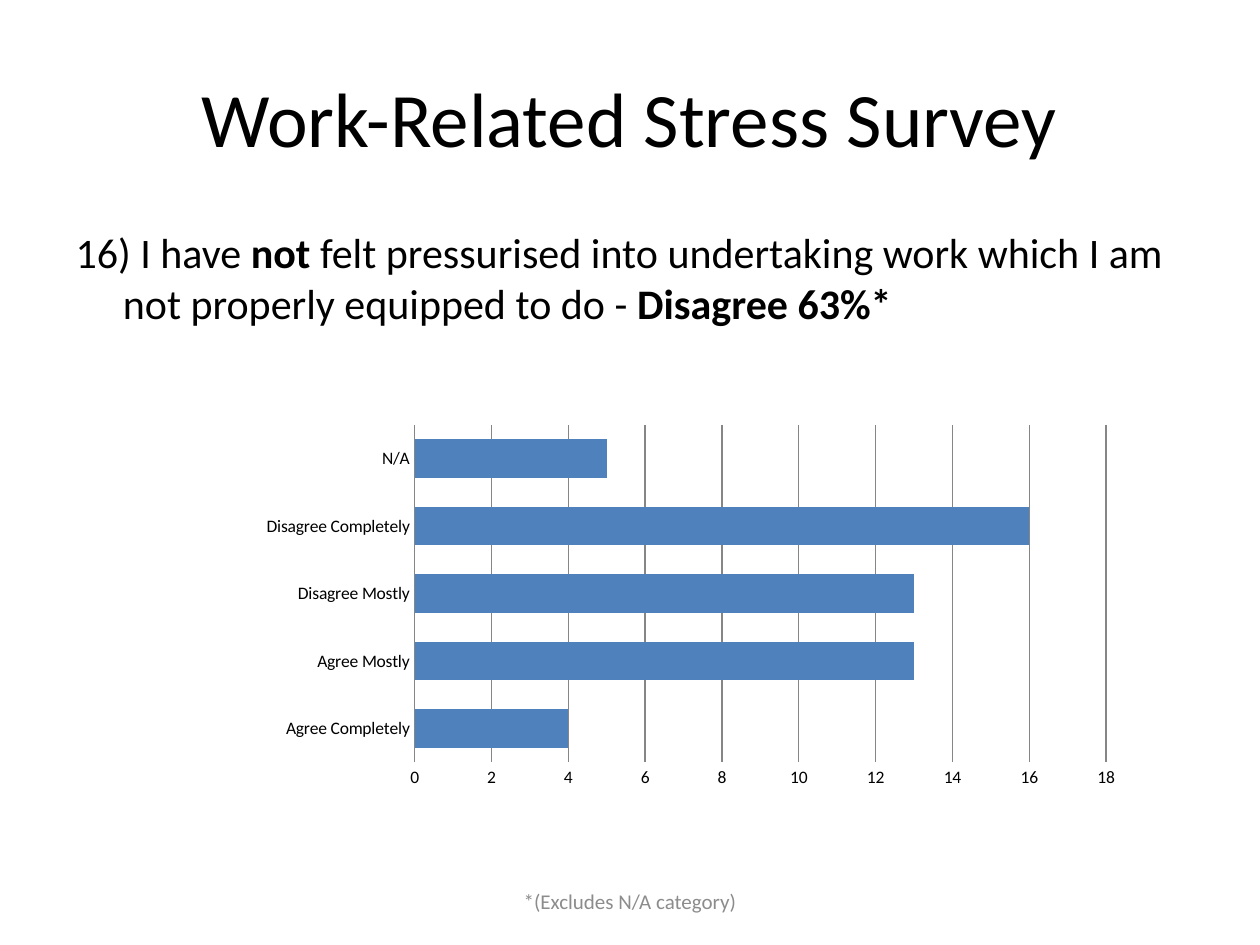
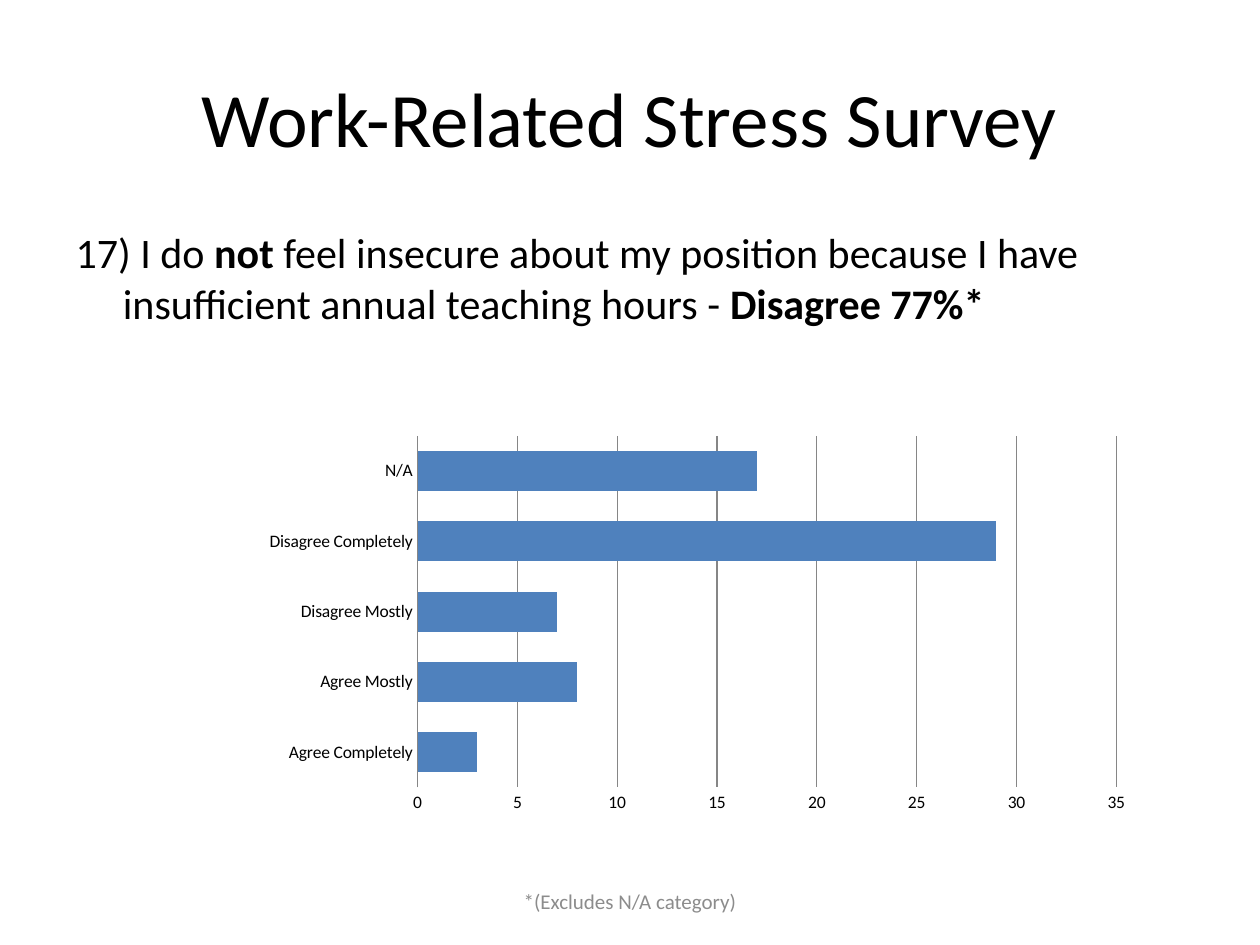
"""Build two survey slides, each with a question and a bar chart of answers."""
from lxml import etree
from pptx import Presentation
from pptx.chart.data import CategoryChartData
from pptx.dml.color import RGBColor
from pptx.enum.chart import XL_CHART_TYPE, XL_TICK_MARK
from pptx.enum.text import MSO_ANCHOR, PP_ALIGN
from pptx.oxml.ns import qn
from pptx.util import Pt

BAR = XL_CHART_TYPE.BAR_CLUSTERED
NO_TICK = XL_TICK_MARK.NONE
LEFT, CENTER = PP_ALIGN.LEFT, PP_ALIGN.CENTER
MIDDLE, TOP = MSO_ANCHOR.MIDDLE, MSO_ANCHOR.TOP


class Theme:
    font = "Calibri"
    ink = RGBColor(0x00, 0x00, 0x00)
    note = RGBColor(0x8C, 0x8C, 0x8C)
    grid = RGBColor(0x86, 0x86, 0x86)
    bar = RGBColor(0x4F, 0x81, 0xBD)
    title_size = Pt(44)
    body_size = Pt(24)
    note_size = Pt(12)
    chart_size = Pt(10)
    line = Pt(0.75)


TITLE = "Work-Related Stress Survey"
NOTE = "*(Excludes N/A category)"
ANSWERS = ["Agree Completely", "Agree Mostly", "Disagree Mostly", "Disagree Completely", "N/A"]
PLOT = {"x": 0.282, "y": 0.027, "w": 0.682, "h": 0.761}
SURVEY = [
    {
        "text": "16) I have **not** felt pressurised into undertaking work which I am "
                "not properly equipped to do - **Disagree 63%***",
        "votes": [4, 13, 13, 16, 5],
        "box": (73.5, 236, 579.5, 253.5),
        "top": 18,
        "step": 2,
    },
    {
        "text": "17) I do **not** feel insecure about my position because I have "
                "insufficient annual teaching hours - **Disagree 77%***",
        "votes": [3, 8, 7, 29, 17],
        "box": (73.5, 242, 585.5, 264),
        "top": 35,
        "step": 5,
    },
]


def write(shape, text, box, size, color=Theme.ink, align=LEFT, anchor=TOP, hang=None):
    """Place a shape and fill it with text, where ** toggles bold."""
    shape.left, shape.top, shape.width, shape.height = [Pt(n) for n in box]
    frame = shape.text_frame
    frame.word_wrap = True
    frame.vertical_anchor = anchor
    para = frame.paragraphs[0]
    para.alignment = align
    if hang:
        props = para._p.get_or_add_pPr()
        props.set("marL", str(Pt(hang)))
        props.set("indent", str(-Pt(hang)))
        etree.SubElement(props, qn("a:buNone"))
    for spot, part in enumerate(text.split("**", 3)):
        run = para.add_run()
        run.text = part.replace("***", "*") if spot < 3 else part.replace("**", "", 1)
        run.font.bold = spot % 2 == 1
        if spot == 3:
            run.text = part.replace("***", "*")
        run.font.name = Theme.font
        run.font.size = size
        run.font.color.rgb = color


def plot(slide, item):
    """Add the bar chart of one question."""
    data = CategoryChartData()
    data.categories = ANSWERS
    data.add_series("Series 1", item["votes"])
    chart = slide.shapes.add_chart(BAR, *[Pt(n) for n in item["box"]], data).chart
    chart.has_legend = False
    chart.has_title = False
    chart.font.name = Theme.font
    chart.font.size = Theme.chart_size
    chart.font.color.rgb = Theme.ink

    bars = chart.plots[0]
    bars.gap_width = 75
    bars.overlap = -25
    bars.vary_by_categories = False
    fill = bars.series[0].format.fill
    fill.solid()
    fill.fore_color.rgb = Theme.bar

    cats, vals = chart.category_axis, chart.value_axis
    for axis in (cats, vals):
        axis.major_tick_mark = NO_TICK
        axis.minor_tick_mark = NO_TICK
    vals.minimum_scale = 0
    vals.maximum_scale = item["top"]
    vals.major_unit = item["step"]
    vals.has_major_gridlines = True
    vals.format.line.fill.background()
    for part in (cats, vals.major_gridlines):
        part.format.line.color.rgb = Theme.grid
        part.format.line.width = Theme.line

    area = chart.element.find(qn("c:chart")).find(qn("c:plotArea"))
    for old in area.findall(qn("c:layout")):
        area.remove(old)
    layout = etree.Element(qn("c:layout"))
    area.insert(0, layout)
    manual = etree.SubElement(layout, qn("c:manualLayout"))
    rules = {"layoutTarget": "inner", "xMode": "edge", "yMode": "edge", **PLOT}
    for name, value in rules.items():
        etree.SubElement(manual, qn(f"c:{name}")).set("val", str(value))


deck = Presentation()
deck.slide_width, deck.slide_height = Pt(720), Pt(540)
for item in SURVEY:
    slide = deck.slides.add_slide(deck.slide_layouts[1])
    write(slide.shapes.title, TITLE, (36, 21.6, 648, 90), Theme.title_size,
          align=CENTER, anchor=MIDDLE)
    write(slide.placeholders[1], item["text"], (36, 126, 648, 356.4), Theme.body_size, hang=27)
    plot(slide, item)
    note = slide.shapes.add_textbox(0, 0, 0, 0)
    write(note, NOTE, (246, 500.5, 228, 28.8), Theme.note_size,
          color=Theme.note, align=CENTER, anchor=MIDDLE)
deck.save("out.pptx")
